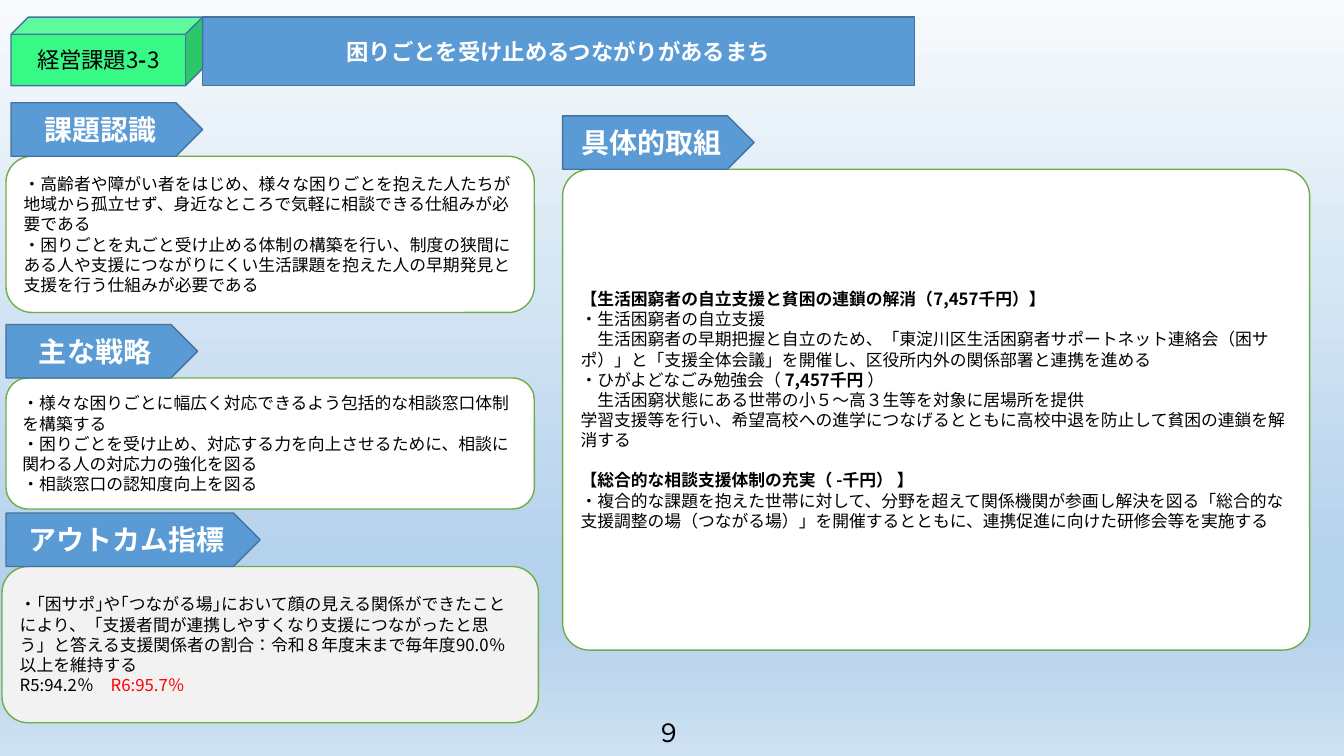
from lxml import etree
from pptx import Presentation
from pptx import util as u
from pptx.dml.color import RGBColor
from pptx.enum import lang, shapes, text
from pptx.oxml import ns

FONT = "Noto Sans CJK JP"
BLACK = RGBColor(0x00, 0x00, 0x00)
WHITE = RGBColor(0xFF, 0xFF, 0xFF)
RED = RGBColor(0xFF, 0x00, 0x00)
GREY = RGBColor(0xF2, 0xF2, 0xF2)
BLUE = RGBColor(0x5B, 0x9B, 0xD5)
DARK_BLUE = RGBColor(0x43, 0x73, 0x9E)
GREEN = RGBColor(0x70, 0xAD, 0x47)
BRIGHT_GREEN = RGBColor(0x38, 0xF8, 0x86)
SKY = [(0, RGBColor(0xF7, 0xFA, 0xFD)), (74, RGBColor(0xB5, 0xD2, 0xEC)),
       (83, RGBColor(0xB5, 0xD2, 0xEC)), (100, RGBColor(0xCE, 0xE1, 0xF2))]

CENTER = text.PP_ALIGN.CENTER
LEFT = text.PP_ALIGN.LEFT
HEADING = {"size": u.Pt(20), "bold": True, "color": WHITE}
BANNER = {"size": u.Pt(16), "bold": True, "color": WHITE}
BADGE = {"size": u.Pt(16), "bold": False, "color": BLACK}
BODY = {"size": u.Pt(12), "bold": False, "color": BLACK}
PAGE = {"size": u.Pt(18), "bold": False, "color": BLACK}
STRONG = {"bold": True}

TAB_HEIGHT = 0.53
CORNER = 0.16667

# Panels: placeholder index, box, fill, corner, tab left, tab width, heading, paragraphs
PANELS = [
    (1, (0.06, 1.55, 5.24, 1.55), WHITE, CORNER, 0.11, 1.9, "課題認識", [
        "・高齢者や障がい者をはじめ、様々な困りごとを抱えた人たちが地域から孤立せず、身近なところで気軽に相談できる仕組みが必要である",
        "・困りごとを丸ごと受け止める体制の構築を行い、制度の狭間にある人や支援につながりにくい生活課題を抱えた人の早期発見と支援を行う仕組みが必要である",
    ]),
    (2, (0.06, 3.75, 5.24, 1.3), WHITE, CORNER, 0.06, 1.9, "主な戦略", [
        "・様々な困りごとに幅広く対応できるよう包括的な相談窓口体制を構築する",
        "・困りごとを受け止め、対応する力を向上させるために、相談に関わる人の対応力の強化を図る",
        "・相談窓口の認知度向上を図る",
    ]),
    (3, (0.02, 5.62, 5.32, 1.55), GREY, CORNER, 0.06, 2.52, "アウトカム指標", [
        "・｢困サポ｣や｢つながる場｣において顔の見える関係ができたことにより、「支援者間が連携しやすくなり支援につながったと思う」と答える支援関係者の割合：令和８年度末まで毎年度90.0％以上を維持する",
        [("R5:94.2％　", {}), ("R6:95.7％", {"color": RED})],
    ]),
    (4, (5.58, 1.68, 7.41, 4.77), WHITE, 0.056, 5.58, 1.9, "具体的取組", [
        [("【生活困窮者の自立支援と貧困の連鎖の解消（7,457千円）】", STRONG)],
        "・生活困窮者の自立支援",
        "　生活困窮者の早期把握と自立のため、「東淀川区生活困窮者サポートネット連絡会（困サポ）」と「支援全体会議」を開催し、区役所内外の関係部署と連携を進める",
        [("・ひがよどなごみ勉強会（", {}), (" 7,457千円 ", STRONG), ("）", {})],
        "　生活困窮状態にある世帯の小５～高３生等を対象に居場所を提供",
        "学習支援等を行い、希望高校への進学につなげるとともに高校中退を防止して貧困の連鎖を解消する",
        [("【総合的な相談支援体制の充実（ -千円） 】", STRONG)],
        "・複合的な課題を抱えた世帯に対して、分野を超えて関係機関が参画し解決を図る「総合的な支援調整の場（つながる場）」を開催するとともに、連携促進に向けた研修会等を実施する",
    ]),
]
SECTION_START = (4, 6)  # panel and paragraph that open a second section
SECTION_GAP = u.Pt(14.4)


def add_run(paragraph, words, style):
    run = paragraph.add_run()
    run.text = words
    run.font.color.rgb = style["color"]
    formats = {"name": FONT, "size": style["size"], "bold": style["bold"],
               "language_id": lang.MSO_LANGUAGE_ID.JAPANESE}
    for key, value in formats.items():
        setattr(run.font, key, value)
    etree.SubElement(run.font._element, ns.qn("a:ea"), typeface=FONT)


def write(shape, paragraphs, style, align, anchor=text.MSO_ANCHOR.MIDDLE,
          fit=text.MSO_AUTO_SIZE.NONE):
    frame = shape.text_frame
    for key, value in {"word_wrap": True, "vertical_anchor": anchor, "auto_size": fit}.items():
        setattr(frame, key, value)
    for i, content in enumerate(paragraphs):
        paragraph = frame.add_paragraph() if i else frame.paragraphs[0]
        for key, value in {"alignment": align, "space_before": u.Pt(0)}.items():
            setattr(paragraph, key, value)
        runs = [(content, {})] if isinstance(content, str) else content
        for words, changes in runs:
            add_run(paragraph, words, {**style, **changes})


def paint(shape, fill, line):
    shape.shadow.inherit = False
    shape.fill.solid()
    shape.fill.fore_color.rgb = fill
    shape.line.color.rgb = line
    shape.line.width = u.Pt(1)


def round_placeholder(placeholder, box, corner, fill, line):
    for side, length in zip(("left", "top", "width", "height"), box):
        setattr(placeholder, side, u.Inches(length))
    outline = etree.SubElement(placeholder.element.spPr, ns.qn("a:prstGeom"), prst="roundRect")
    guides = etree.SubElement(outline, ns.qn("a:avLst"))
    etree.SubElement(guides, ns.qn("a:gd"), name="adj", fmla=f"val {round(corner * 100000)}")
    paint(placeholder, fill, line)


def remove_bullets(placeholder):
    for paragraph in placeholder.text_frame.paragraphs:
        properties = paragraph._p.get_or_add_pPr()
        for key in ("marL", "indent"):
            properties.set(key, "0")
        etree.SubElement(properties, ns.qn("a:buNone"))


def add_label(slide, kind, box, fill, words, style):
    label = slide.shapes.add_shape(kind, *map(u.Inches, box))
    paint(label, fill, DARK_BLUE)
    write(label, [words], style, CENTER)


def add_panel(slide, index, box, fill, corner, paragraphs):
    panel = slide.placeholders[index]
    round_placeholder(panel, box, corner, fill, GREEN)
    write(panel, paragraphs, BODY, LEFT)
    remove_bullets(panel)


def set_background(slide):
    sky = slide.background.fill
    sky.gradient()
    sky.gradient_angle = 270
    stops = slide.element.find(".//" + ns.qn("a:gsLst"))
    for stop in list(stops):
        stops.remove(stop)
    for percent, color in SKY:
        stop = etree.SubElement(stops, ns.qn("a:gs"), pos=str(percent * 1000))
        etree.SubElement(stop, ns.qn("a:srgbClr"), val=str(color))


def main():
    deck = Presentation()
    deck.slide_width, deck.slide_height = u.Inches(13.33), u.Inches(7.5)
    slide = deck.slides.add_slide(deck.slide_layouts.get_by_name("Comparison"))
    set_background(slide)

    # Banner and badge
    banner = slide.shapes.title
    round_placeholder(banner, (2.01, 0.17, 7.06, 0.68), CORNER, BLUE, DARK_BLUE)
    write(banner, ["困りごとを受け止めるつながりがあるまち"], BANNER, CENTER)
    add_label(slide, shapes.MSO_SHAPE.CUBE, (0.11, 0.17, 1.9, 0.68), BRIGHT_GREEN,
              [("経営課題3", {}), ("-", STRONG), ("3", {})], BADGE)

    # Panels, each with its heading tab sitting on the top edge
    for index, box, fill, corner, tab_left, tab_width, heading, paragraphs in PANELS:
        add_panel(slide, index, box, fill, corner, paragraphs)
        add_label(slide, shapes.MSO_SHAPE.PENTAGON,
                  (tab_left, box[1] - TAB_HEIGHT, tab_width, TAB_HEIGHT), BLUE, heading, HEADING)
    index, position = SECTION_START
    section = slide.placeholders[index].text_frame.paragraphs[position]
    section.space_before = SECTION_GAP

    # Page number
    page = slide.shapes.add_textbox(*map(u.Inches, (6.41, 7.07, 0.51, 0.4)))
    write(page, ["９"], PAGE, LEFT, text.MSO_ANCHOR.TOP, text.MSO_AUTO_SIZE.SHAPE_TO_FIT_TEXT)

    deck.save("out.pptx")


if __name__ == "__main__":
    main()
